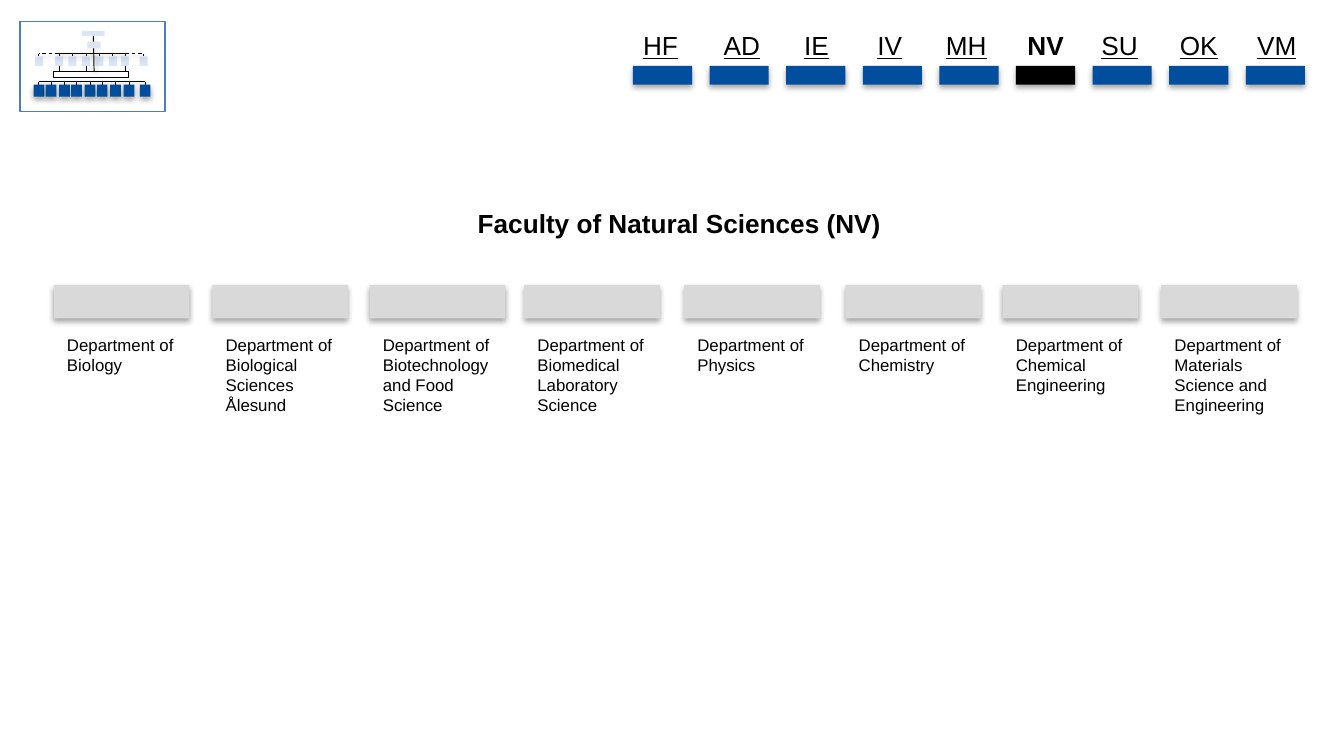
from dataclasses import dataclass

from lxml.etree import SubElement
from pptx import Presentation
from pptx.dml.color import RGBColor
from pptx.enum.dml import MSO_LINE
from pptx.enum.shapes import MSO_CONNECTOR, MSO_SHAPE
from pptx.enum.text import MSO_ANCHOR, MSO_AUTO_SIZE, PP_ALIGN
from pptx.oxml.ns import qn
from pptx.shapes.autoshape import Shape
from pptx.shapes.connector import Connector
from pptx.util import Inches, Pt

BLUE, PALE_BLUE, SKY, FRAME = "014E9F", "DCE6F2", "8EB4E3", "4B7EBC"
GREY, BLACK, WHITE = "D9D9D9", "000000", "FFFFFF"
TOP, BOTTOM = 0, 2


@dataclass
class FacultyTab:
    code: str
    label_left: float
    label_width: float
    current: bool = False


@dataclass
class Department:
    field: str
    left: float
    lines: int


TABS = [
    FacultyTab("HF", 4.68, 0.47),
    FacultyTab("AD", 5.28, 0.48),
    FacultyTab("IE", 5.88, 0.39),
    FacultyTab("IV", 6.41, 0.42),
    FacultyTab("MH", 6.94, 0.5),
    FacultyTab("NV", 7.54, 0.48, current=True),
    FacultyTab("SU", 8.09, 0.48),
    FacultyTab("OK", 8.64, 0.56),
    FacultyTab("VM", 9.22, 0.56),
]
DEPARTMENTS = [
    Department("Biology", 0.4, 2),
    Department("Biological Sciences Ålesund", 1.58, 4),
    Department("Biotechnology and Food Science", 2.75, 4),
    Department("Biomedical Laboratory Science", 3.9, 4),
    Department("Physics", 5.09, 2),
    Department("Chemistry", 6.29, 2),
    Department("Chemical Engineering", 7.46, 3),
    Department("Materials Science and Engineering", 8.64, 4),
]
UNIT_CENTRES = [0.44, 0.54, 0.64, 0.74, 0.84, 0.93]
SIDE_UNITS = [(0.29, 0.44), (1.07, 0.93)]
MAP_FACULTY_LEFTS = [0.25, 0.34, 0.44, 0.53, 0.63, 0.72, 0.82, 0.92, 1.04]


def color(value: str) -> RGBColor:
    return RGBColor.from_string(value)


def add_shadow(effects, alpha: int, distance: float) -> None:
    """Fill an a:effectLst with a soft black shadow that falls downwards."""
    shadow = SubElement(effects, qn("a:outerShdw"), blurRad=str(Pt(3.1)),
                        dist=str(Pt(distance)), dir="5400000", rotWithShape="0")
    black = SubElement(shadow, qn("a:srgbClr"), val=BLACK)
    SubElement(black, qn("a:alpha"), val=str(alpha * 1000))


def add_box(shapes, left: float, top: float, width: float, height: float,
            fill: str = "", line: str = "", line_width: float = 0.5,
            shadow: bool = False, opacity: int = 100) -> Shape:
    shape = shapes.add_shape(MSO_SHAPE.RECTANGLE, Inches(left), Inches(top),
                             Inches(width), Inches(height))
    if fill:
        shape.fill.solid()
        shape.fill.fore_color.rgb = color(fill)
    else:
        shape.fill.background()
    if opacity < 100:
        fill_color = shape.element.spPr.find(qn("a:solidFill"))[0]
        SubElement(fill_color, qn("a:alpha"), val=str(opacity * 1000))
    if line:
        shape.line.color.rgb = color(line)
        shape.line.width = Pt(line_width)
    else:
        shape.line.fill.background()
    shape.shadow.inherit = False
    if shadow:
        add_shadow(shape.element.spPr.find(qn("a:effectLst")), 35, 1.8)
    return shape


def add_line(shapes, x1: float, y1: float, x2: float, y2: float,
             dashed: bool = False) -> Connector:
    line = shapes.add_connector(MSO_CONNECTOR.STRAIGHT, Inches(x1), Inches(y1),
                                Inches(x2), Inches(y2))
    line.line.color.rgb = color(BLACK)
    line.line.width = Pt(0.5)
    if dashed:
        line.line.dash_style = MSO_LINE.DASH
    add_shadow(SubElement(line.element.spPr, qn("a:effectLst")), 38, 1.6)
    return line


def set_text(shape: Shape, text: str, size: float, bold: bool = False,
             underline: bool = False, centred: bool = True, wrap: bool = False) -> None:
    frame = shape.text_frame
    frame.text = text
    frame.word_wrap = wrap
    frame.auto_size = MSO_AUTO_SIZE.SHAPE_TO_FIT_TEXT
    frame.vertical_anchor = MSO_ANCHOR.TOP
    paragraph = frame.paragraphs[0]
    paragraph.alignment = PP_ALIGN.CENTER if centred else PP_ALIGN.LEFT
    font = paragraph.runs[0].font
    font.name, font.size, font.bold, font.underline = "Arial", Pt(size), bold, underline
    font.color.rgb = color(BLACK)


def add_textbox(shapes, left: float, top: float, width: float, height: float) -> Shape:
    return shapes.add_textbox(Inches(left), Inches(top), Inches(width), Inches(height))


def add_tab(shapes, tab: FacultyTab, bar_left: float) -> None:
    add_box(shapes, bar_left, 0.49, 0.44, 0.14, BLACK if tab.current else BLUE, shadow=True)
    label = add_textbox(shapes, tab.label_left, 0.17, tab.label_width, 0.34)
    set_text(label, tab.code, 14, bold=tab.current, underline=not tab.current)


def add_department(shapes, department: Department) -> None:
    add_box(shapes, department.left, 2.12, 1.01, 0.25, GREY, shadow=True)
    label = add_textbox(shapes, department.left, 2.44, 1.09, 0.1 + 0.15 * department.lines)
    set_text(label, f"Department of {department.field}", 9, centred=False, wrap=True)


def add_organisation_map(shapes) -> None:
    """Draw the small overview chart in the top left corner."""
    add_line(shapes, UNIT_CENTRES[0], 0.4, UNIT_CENTRES[-1], 0.4)
    for index, centre in enumerate(UNIT_CENTRES):
        unit = add_box(shapes, centre - 0.03, 0.42, 0.06, 0.07, SKY, opacity=32)
        add_line(shapes, centre, 0.4, centre, 0.42).end_connect(unit, TOP)
        if index in (0, 2, 5):
            add_line(shapes, centre, 0.49, centre, 0.53).begin_connect(unit, BOTTOM)
    for centre, inner in SIDE_UNITS:
        unit = add_box(shapes, centre - 0.03, 0.42, 0.06, 0.07, SKY, opacity=32)
        add_line(shapes, inner, 0.4, centre, 0.4, dashed=True)
        add_line(shapes, centre, 0.4, centre, 0.42, dashed=True).end_connect(unit, TOP)

    add_box(shapes, 0.4, 0.53, 0.56, 0.05, WHITE, BLACK)
    add_line(shapes, 0.29, 0.61, 1.08, 0.61)
    for left in MAP_FACULTY_LEFTS:
        faculty = add_box(shapes, left, 0.63, 0.08, 0.09, BLUE, shadow=True)
        centre = left + 0.04
        add_line(shapes, centre, 0.61, centre, 0.63).end_connect(faculty, TOP)

    board = add_box(shapes, 0.61, 0.23, 0.17, 0.04, PALE_BLUE)
    add_line(shapes, 0.7, 0.27, 0.7, 0.53).begin_connect(board, BOTTOM)
    add_box(shapes, 0.65, 0.31, 0.1, 0.05, PALE_BLUE)
    add_box(shapes, 0.15, 0.16, 1.08, 0.67, line=FRAME, line_width=1)


def main() -> None:
    presentation = Presentation()
    presentation.slide_width = Inches(10)
    presentation.slide_height = Inches(10 * 9 / 16)
    slide = presentation.slides.add_slide(presentation.slide_layouts[5])

    title = slide.shapes.title
    title.left, title.top = Inches(3.42), Inches(1.49)
    title.width, title.height = Inches(3.27), Inches(0.34)
    set_text(title, "Faculty of Natural Sciences (NV)", 14, bold=True)

    for department in DEPARTMENTS:
        add_department(slide.shapes, department)
    for index, tab in enumerate(TABS):
        add_tab(slide.shapes, tab, 4.71 + 0.57 * index)
    add_organisation_map(slide.shapes.add_group_shape().shapes)
    presentation.save("out.pptx")


if __name__ == "__main__":
    main()
